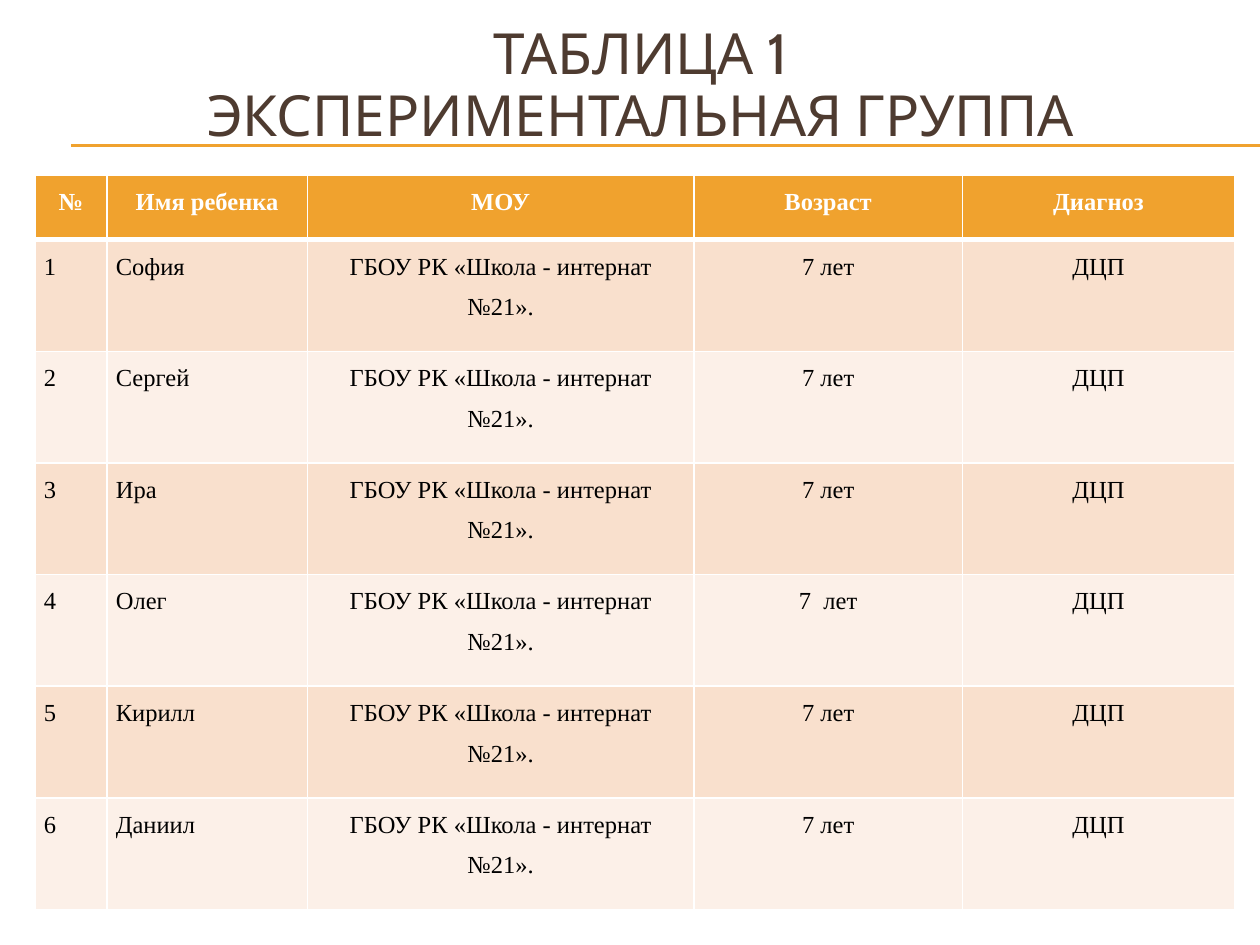
from lxml.etree import SubElement
from pptx import Presentation
from pptx.dml.color import RGBColor
from pptx.enum.shapes import MSO_CONNECTOR
from pptx.enum.text import MSO_ANCHOR, PP_ALIGN
from pptx.oxml.ns import qn
from pptx.util import Pt

ORANGE, BROWN, WHITE, BLACK = "F0A22E", "4E3B30", "FFFFFF", "000000"
BAND_FILLS = ("F9E0CD", "FCF0E8")
HEADERS = ("№", "Имя ребенка", "МОУ", "Возраст", "Диагноз")
CHILDREN = ("София", "Сергей", "Ира", "Олег", "Кирилл", "Даниил")
SCHOOL = "ГБОУ РК «Школа - интернат №21»."
AGE = "7 лет"
AGES = {"Олег": "7  лет"}
DIAGNOSIS = "ДЦП"
COLUMN_WIDTHS = (41.2, 114.4, 221, 153.4, 155.6)
HEADER_HEIGHT, ROW_HEIGHT = 36.7, 63.8


def color(value):
    return RGBColor.from_string(value)


def format_font(font, name, size, value, bold=False):
    font.name = name
    font.size = Pt(size)
    font.bold = bold
    font.color.rgb = color(value)


def add_rule(slide, y):
    rule = slide.shapes.add_connector(
        MSO_CONNECTOR.STRAIGHT, Pt(40.5), Pt(y), Pt(720), Pt(y))
    rule.line.color.rgb = color(ORANGE)
    rule.line.width = Pt(0.75)
    SubElement(rule._element.spPr, qn("a:effectLst"))


def fill_title(slide):
    title = slide.shapes.title
    title.left, title.top, title.width, title.height = Pt(24), Pt(36), Pt(684), Pt(66)
    frame = title.text_frame
    frame.text = "ТАБЛИЦА 1\vЭКСПЕРИМЕНТАЛЬНАЯ ГРУППА"
    frame.word_wrap = True
    frame.vertical_anchor = MSO_ANCHOR.MIDDLE
    frame.margin_bottom = Pt(42)  # lifts the two lines above the table
    paragraph = frame.paragraphs[0]
    paragraph.alignment = PP_ALIGN.CENTER
    paragraph.line_spacing = 0.9
    for run in paragraph.runs:
        format_font(run.font, "Cabin", 32.4, BROWN)


def set_borders(cell, bottom_width, top_width):
    """Draw white borders; they must come before the fill in the cell's XML."""
    properties = cell._tc.get_or_add_tcPr()
    widths = {"a:lnL": 1, "a:lnR": 1, "a:lnT": top_width, "a:lnB": bottom_width}
    for tag, width in widths.items():
        line = SubElement(properties, qn(tag), w=str(Pt(width)))
        fill = SubElement(line, qn("a:solidFill"))
        SubElement(fill, qn("a:srgbClr"), val=WHITE)


def fill_cell(cell, text, row, column):
    is_header = row == 0
    set_borders(cell, 3 if is_header else 1, 3 if row == 1 else 1)
    cell.fill.solid()
    cell.fill.fore_color.rgb = color(ORANGE if is_header else BAND_FILLS[(row - 1) % 2])
    cell.margin_left = cell.margin_right = Pt(5)
    cell.margin_top = cell.margin_bottom = Pt(0)
    cell.text_frame.text = text
    paragraph = cell.text_frame.paragraphs[0]
    centered = is_header or column >= 2
    paragraph.alignment = PP_ALIGN.CENTER if centered else PP_ALIGN.LEFT
    paragraph.line_spacing = 1.5
    paragraph.space_after = Pt(10)
    format_font(paragraph.runs[0].font, "Times New Roman", 14,
                WHITE if is_header else BLACK, is_header)


def add_group_table(slide):
    rows = [HEADERS]
    for number, child in enumerate(CHILDREN, start=1):
        rows.append((str(number), child, SCHOOL, AGES.get(child, AGE), DIAGNOSIS))
    height = HEADER_HEIGHT + ROW_HEIGHT * len(CHILDREN)
    table = slide.shapes.add_table(
        len(rows), len(HEADERS), Pt(20), Pt(100.3),
        Pt(sum(COLUMN_WIDTHS)), Pt(height)).table
    for column, width in zip(table.columns, COLUMN_WIDTHS):
        column.width = Pt(width)
    for row_index, values in enumerate(rows):
        table.rows[row_index].height = Pt(ROW_HEIGHT if row_index else HEADER_HEIGHT)
        for column_index, text in enumerate(values):
            fill_cell(table.cell(row_index, column_index), text, row_index, column_index)


def main():
    presentation = Presentation()
    presentation.slide_width, presentation.slide_height = Pt(720), Pt(540)
    slide = presentation.slides.add_slide(presentation.slide_layouts[5])
    for y in (82.8, 83.4):
        add_rule(slide, y)
    fill_title(slide)
    # The title text lies over the rules.
    slide.shapes._spTree.append(slide.shapes.title._element)
    add_group_table(slide)
    presentation.save("out.pptx")


if __name__ == "__main__":
    main()
